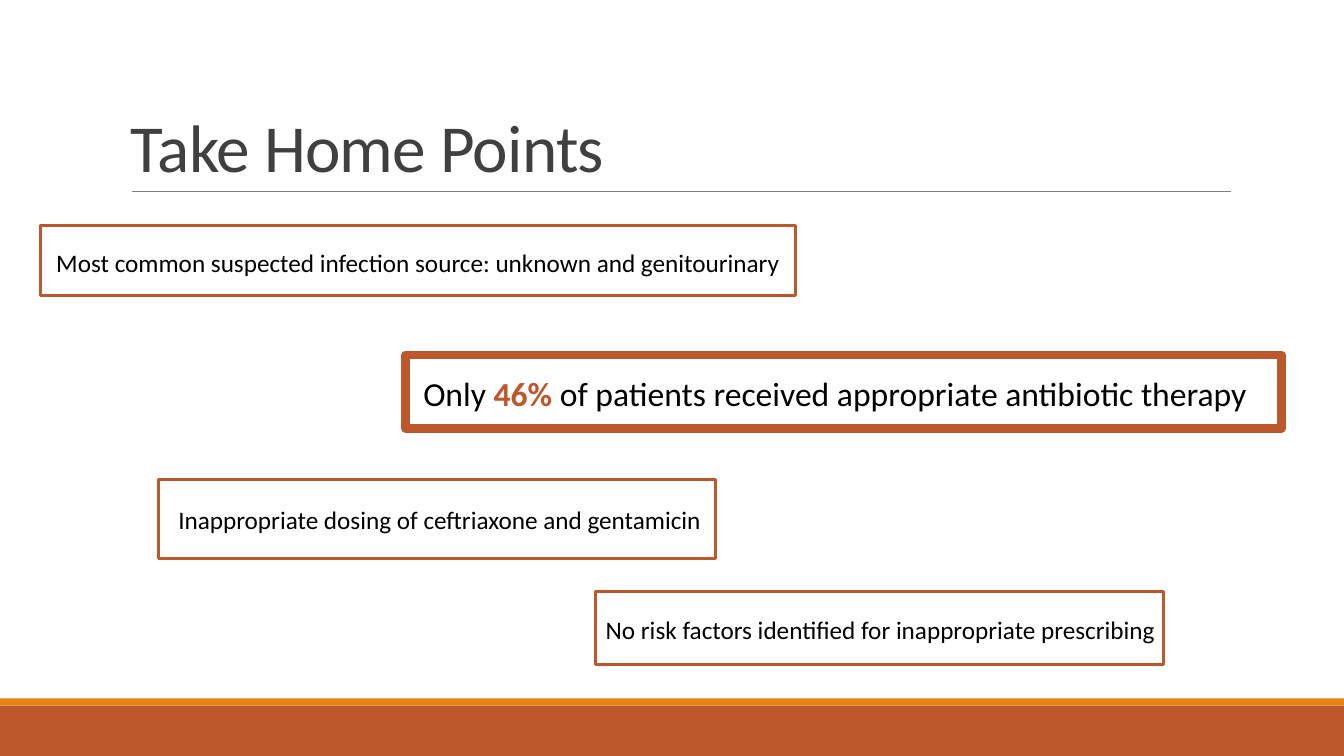
import pptx
import pptx.util
import pptx.dml.color
import pptx.enum.shapes
import pptx.enum.text
import pptx.oxml.ns
import lxml.etree

Inches, Pt = pptx.util.Inches, pptx.util.Pt
COLORS = {"rust": "BD582C", "orange": "E48312", "rule": "808080",
          "title": "404040", "text": "000000"}
FONT = "Calibri"

TITLE = "Take Home Points"
TITLE_AREA = (1.2, 0.31, 11, 1.59)
TITLE_RULE = (1.31, 1.9, 12.21, 1.9)
FOOTER_BANDS = [((0, 7, 13.33, 0.5), "rust"), ((0, 6.93, 13.33, 0.07), "orange")]

# Each run is (wording, colour, bold)
POINTS = [
    {"runs": [("Only ", "text", False), ("46%", "rust", True),
              (" of patients received appropriate antibiotic therapy", "text", False)],
     "size": 24, "area": (4.1, 3.62, 8.8, 0.53),
     "frame": (4.02, 3.52, 8.69, 0.73), "border": 6},
    {"runs": [("Inappropriate dosing of ceftriaxone and gentamicin", "text", False)],
     "size": 18, "area": (1.67, 4.93, 7.06, 0.43),
     "frame": (1.57, 4.76, 5.53, 0.78), "border": 2.25},
    {"runs": [("Most common suspected infection source: unknown and genitourinary",
               "text", False)],
     "size": 18, "area": (0.46, 2.38, 7.96, 0.43),
     "frame": (0.4, 2.24, 7.49, 0.69), "border": 2.25},
    {"runs": [("No risk factors identified for inappropriate prescribing", "text", False)],
     "size": 18, "area": (5.91, 6.02, 7.06, 0.43),
     "frame": (5.91, 5.87, 5.63, 0.72), "border": 2.25},
]
POINT_PARAGRAPH = {"line_spacing": 1.07, "space_after": Pt(8)}
TITLE_PARAGRAPH = {"line_spacing": 0.85}


def rgb(name):
    return pptx.dml.color.RGBColor.from_string(COLORS[name])


def set_all(target, values):
    for name, value in values.items():
        setattr(target, name, value)


def add_rectangle(slide, area, fill=None, border=None):
    rectangle = slide.shapes.add_shape(
        pptx.enum.shapes.MSO_SHAPE.RECTANGLE, *map(Inches, area))
    rectangle.shadow.inherit = False
    if fill:
        rectangle.fill.solid()
        rectangle.fill.fore_color.rgb = rgb(fill)
    else:
        rectangle.fill.background()
    if border:
        rectangle.line.color.rgb = rgb("rust")
        rectangle.line.width = Pt(border)
    else:
        rectangle.line.fill.background()


def add_text(slide, area, runs, size, paragraph_format, frame_format):
    frame = slide.shapes.add_textbox(*map(Inches, area)).text_frame
    set_all(frame, {"word_wrap": True, **frame_format})
    paragraph = frame.paragraphs[0]
    set_all(paragraph, paragraph_format)
    for wording, color, bold in runs:
        run = paragraph.add_run()
        run.text = wording
        set_all(run.font, {"name": FONT, "size": Pt(size), "bold": bold})
        run.font.color.rgb = rgb(color)
    return paragraph


def add_title_rule(slide):
    rule = slide.shapes.add_connector(
        pptx.enum.shapes.MSO_CONNECTOR.STRAIGHT, *map(Inches, TITLE_RULE))
    rule.line.color.rgb = rgb("rule")
    rule.line.width = Pt(0.5)
    lxml.etree.SubElement(rule._element.spPr, pptx.oxml.ns.qn("a:effectLst"))


def main():
    deck = pptx.Presentation()
    set_all(deck, {"slide_width": Inches(13.33), "slide_height": Inches(7.5)})
    slide = deck.slides.add_slide(deck.slide_layouts[6])

    for area, color in FOOTER_BANDS:
        add_rectangle(slide, area, fill=color)
    add_title_rule(slide)

    title = add_text(slide, TITLE_AREA, [(TITLE, "title", False)], 48, TITLE_PARAGRAPH,
                     {"vertical_anchor": pptx.enum.text.MSO_ANCHOR.BOTTOM})
    # Letter spacing in hundredths of a point
    title.runs[0].font._element.set("spc", "-50")

    for point in POINTS:
        add_text(slide, point["area"], point["runs"], point["size"], POINT_PARAGRAPH,
                 {"auto_size": pptx.enum.text.MSO_AUTO_SIZE.SHAPE_TO_FIT_TEXT})
        add_rectangle(slide, point["frame"], border=point["border"])

    deck.save("out.pptx")


if __name__ == "__main__":
    main()
